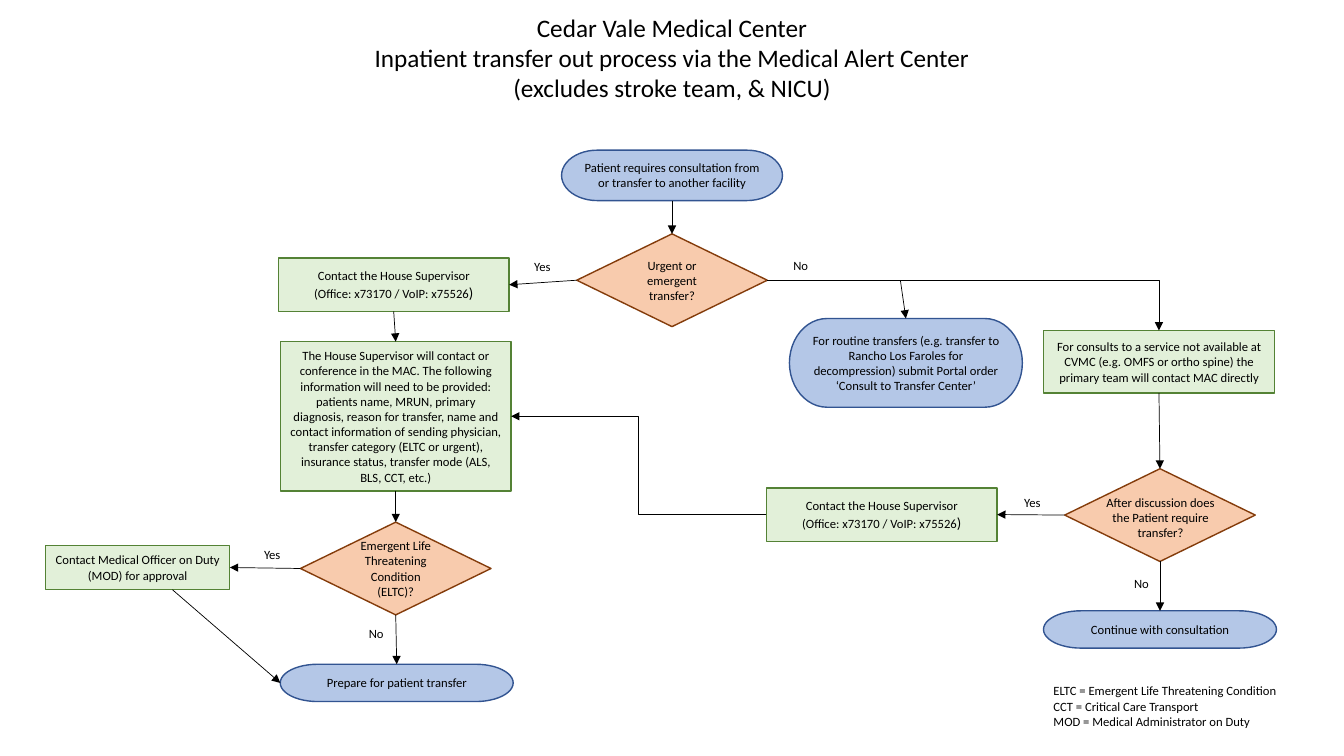
from dataclasses import dataclass, field

from lxml.etree import SubElement
from pptx import Presentation
from pptx.dml.color import RGBColor as Rgb
from pptx.enum.shapes import MSO_CONNECTOR as Conn, MSO_SHAPE as Shape
from pptx.enum.text import MSO_ANCHOR as Anchor, PP_ALIGN as Align
from pptx.oxml.ns import qn
from pptx.util import Inches, Pt

TOP, LEFT, BOTTOM, RIGHT = range(4)


@dataclass(frozen=True)
class Theme:
    font: str = "Calibri"
    ink: str = "000000"
    title: float = 18
    body: float = 9
    paren: float = 10.5
    edge: float = 1
    wire: float = 0.5
    kinds: dict = field(default_factory=lambda: {
        "end": (Shape.FLOWCHART_TERMINATOR, "B4C7E7", "325491"),
        "ask": (Shape.FLOWCHART_DECISION, "F8CBAD", "843C0B"),
        "step": (Shape.RECTANGLE, "E2F0D9", "548235"),
    })


@dataclass(frozen=True)
class Box:
    x: float
    y: float
    w: float
    h: float

    def sub(self, x, y, w, h):
        return Box(self.x + x, self.y + y, w, h)

    def emu(self):
        return [Inches(v) for v in (self.x, self.y, self.w, self.h)]


THEME = Theme()
SUPER = ["Contact the House Supervisor",
         [("(Office: x73170 / VoIP: x75526", THEME.body), (")", THEME.paren)]]


def apply(target, values):
    for name, value in values.items():
        setattr(target, name, value)


def write(frame, lines, size=THEME.body, align=Align.CENTER, anchor=Anchor.TOP, wrap=True):
    apply(frame, {"word_wrap": wrap, "vertical_anchor": anchor})
    for i, line in enumerate(lines):
        para = frame.add_paragraph() if i else frame.paragraphs[0]
        para.alignment = align
        for words, points in [(line, size)] if isinstance(line, str) else line:
            run = para.add_run()
            run.text = words
            apply(run.font, {"name": THEME.font, "size": Pt(points)})
            run.font.color.rgb = Rgb.from_string(THEME.ink)


def label(slide, box, *lines, **style):
    write(slide.shapes.add_textbox(*box.emu()).text_frame, lines, **style)


def tag(slide, box, x, y, word):
    label(slide, box.sub(x, y, 0.38, 0.25), word, align=Align.LEFT, wrap=False)


def node(slide, kind, box, *lines):
    form, fill, edge = THEME.kinds[kind]
    shape = slide.shapes.add_shape(form, *box.emu())
    shape.shadow.inherit = False
    shape.fill.solid()
    shape.fill.fore_color.rgb = Rgb.from_string(fill)
    shape.line.color.rgb = Rgb.from_string(edge)
    shape.line.width = Pt(THEME.edge)
    if lines:
        write(shape.text_frame, lines, anchor=Anchor.MIDDLE)
    return shape


def arrow(slide, start, end, form=Conn.STRAIGHT):
    spots = []
    for shape, side in (start, end):
        if isinstance(side, int):
            spots += [
                shape.left + (shape.width * (0, 0, 0, 2)[side] // 2 if side in (LEFT, RIGHT)
                              else shape.width // 2),
                shape.top + (shape.height // 2 if side in (LEFT, RIGHT)
                             else shape.height * (side == BOTTOM))]
        else:
            spots += [Inches(v) for v in side]
    wire = slide.shapes.add_connector(form, *spots)
    wire.line.color.rgb = Rgb.from_string(THEME.ink)
    wire.line.width = Pt(THEME.wire)
    SubElement(wire.line._get_or_add_ln(), qn("a:tailEnd"), type="triangle")
    SubElement(wire._element.spPr, qn("a:effectLst"))
    if form == Conn.STRAIGHT:
        for join, (shape, side) in ((wire.begin_connect, start), (wire.end_connect, end)):
            if shape is not None:
                join(shape, side)
    return wire


def triage(slide, box):
    first = node(slide, "end", box.sub(0.37, 0, 2.19, 0.5),
                 "Patient requires consultation from or transfer to another facility")
    urgent = node(slide, "ask", box.sub(0.52, 0.83, 1.89, 0.92), "Urgent or emergent transfer?")
    arrow(slide, (first, BOTTOM), (urgent, TOP))
    tag(slide, box, 0, 1.03, "Yes")
    tag(slide, box, 2.57, 1.02, "No")
    return urgent


def house(slide, box, urgent):
    call = node(slide, "step", box.sub(2.31, 0, 2.29, 0.53), *SUPER)
    brief = node(slide, "step", box.sub(2.33, 0.83, 2.29, 1.48),
                 "The House Supervisor will contact or conference in the MAC. The following "
                 "information will need to be provided: patients name, MRUN, primary diagnosis, "
                 "reason for transfer, name and contact information of sending physician, "
                 "transfer category (ELTC or urgent), insurance status, transfer mode "
                 "(ALS, BLS, CCT, etc.)")
    threat = node(slide, "ask", box.sub(2.53, 2.62, 1.89, 0.92),
                  "Emergent Life Threatening Condition (ELTC)?")
    duty = node(slide, "step", box.sub(0, 2.85, 1.83, 0.44),
                "Contact Medical Officer on Duty (MOD) for approval")
    ready = node(slide, "end", box.sub(2.33, 4.03, 2.31, 0.37), "Prepare for patient transfer")
    arrow(slide, (urgent, LEFT), (call, RIGHT))
    for upper, lower in ((call, brief), (brief, threat), (threat, ready)):
        arrow(slide, (upper, BOTTOM), (lower, TOP))
    arrow(slide, (threat, LEFT), (duty, RIGHT))
    arrow(slide, (None, (box.x + 1.26, box.y + 3.29)), (ready, LEFT))
    tag(slide, box, 2.07, 2.82, "Yes")
    tag(slide, box, 3.11, 3.6, "No")
    return brief


def direct(slide, box, urgent, brief):
    routine = node(slide, "end", box.sub(0.23, 0, 2.31, 0.88),
                   "For routine transfers (e.g. transfer to Rancho Los Faroles for decompression) "
                   "submit Portal order ‘Consult to Transfer Center’")
    consult = node(slide, "step", box.sub(2.75, 0.12, 2.29, 0.62),
                   "For consults to a service not available at CVMC (e.g. OMFS or ortho spine) "
                   "the primary team will contact MAC directly")
    need = node(slide, "ask", box.sub(2.96, 1.49, 1.89, 0.92))
    label(slide, box.sub(3.18, 1.7, 1.46, 0.86),
          "After discussion does the Patient require transfer?")
    call = node(slide, "step", box.sub(0, 1.68, 2.29, 0.53), *SUPER)
    stay = node(slide, "end", box.sub(2.75, 2.9, 2.31, 0.37), "Continue with consultation")
    bend = arrow(slide, (urgent, RIGHT), (consult, TOP), Conn.ELBOW)
    bend._element.spPr.prstGeom.set("prst", "bentConnector2")
    arrow(slide, (None, (box.x + 1.33, box.y - 0.38)), (routine, TOP))
    arrow(slide, (consult, BOTTOM), (need, TOP))
    arrow(slide, (need, LEFT), (call, RIGHT))
    arrow(slide, (need, BOTTOM), (stay, TOP))
    arrow(slide, (call, LEFT), (brief, RIGHT), Conn.ELBOW)
    tag(slide, box, 2.46, 1.7, "Yes")
    tag(slide, box, 3.55, 2.5, "No")


def main():
    deck = Presentation()
    apply(deck, {"slide_width": Inches(13.33), "slide_height": Inches(7.5)})
    slide = deck.slides.add_slide(deck.slide_layouts[6])
    label(slide, Box(2.47, 0.07, 8.39, 1.01), "Cedar Vale Medical Center",
          "Inpatient transfer out process via the Medical Alert Center",
          "(excludes stroke team, & NICU)", size=THEME.title)
    urgent = triage(slide, Box(5.2, 1.49, 2.92, 1.75))
    brief = house(slide, Box(0.45, 2.56, 4.64, 4.4), urgent)
    direct(slide, Box(7.6, 3.16, 5.06, 3.27), urgent, brief)
    label(slide, Box(10.35, 6.73, 2.59, 0.56), "ELTC = Emergent Life Threatening Condition",
          "CCT = Critical Care Transport", "MOD = Medical Administrator on Duty",
          align=Align.LEFT)
    deck.save("out.pptx")


if __name__ == "__main__":
    main()
